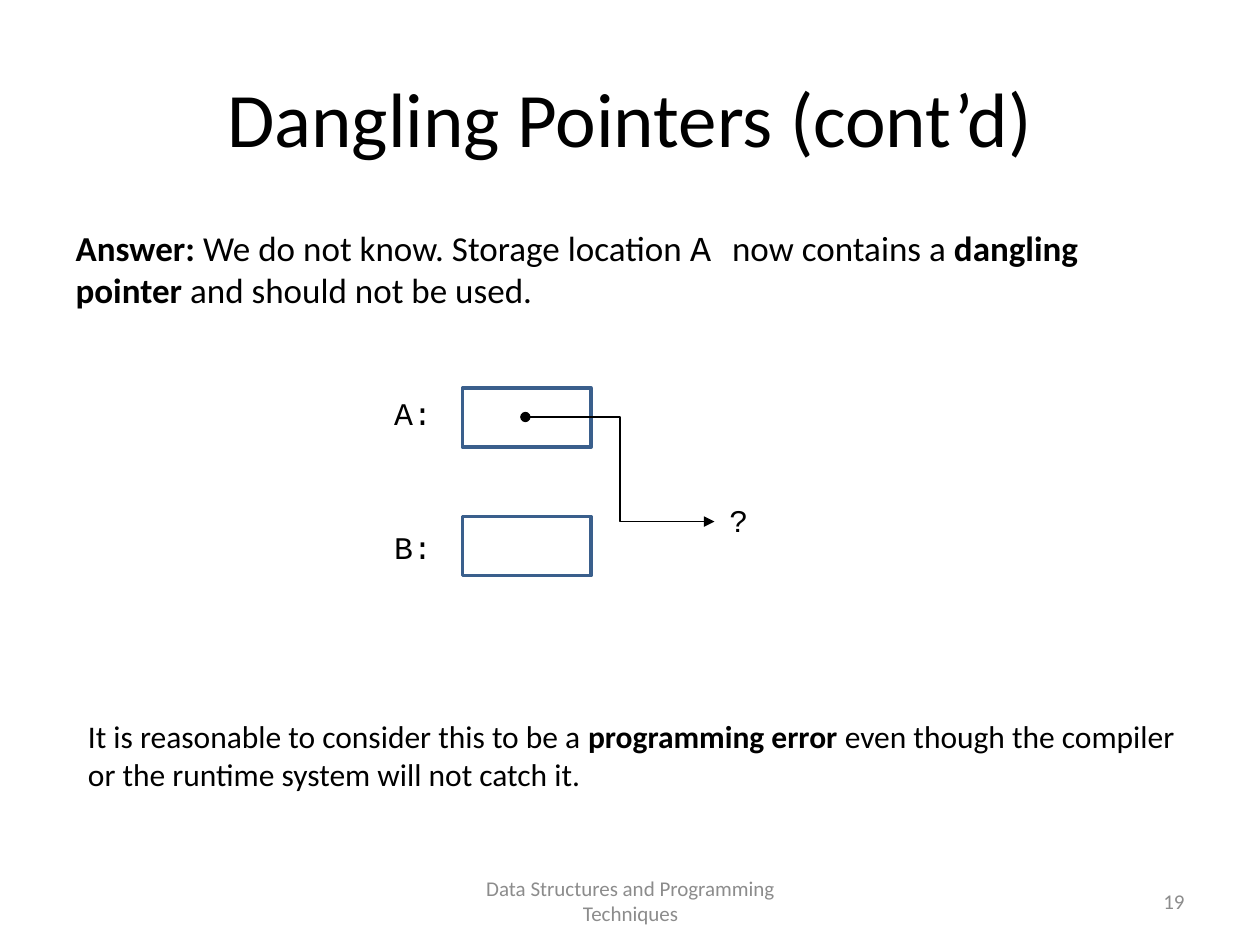
from lxml import etree
from pptx import Presentation
from pptx.dml.color import RGBColor
from pptx.enum.shapes import MSO_CONNECTOR, MSO_SHAPE
from pptx.enum.text import MSO_ANCHOR, PP_ALIGN
from pptx.oxml.ns import qn
from pptx.util import Inches, Pt


def color(hex_string):
    return RGBColor.from_string(hex_string)


def write(shape, lines, size, font="Calibri", hex_string="000000",
          align=PP_ALIGN.LEFT, anchor=MSO_ANCHOR.TOP, wrap=True):
    """Fill a shape with lines, each a list of (text, bold, font) runs."""
    frame = shape.text_frame
    frame.word_wrap = wrap
    frame.vertical_anchor = anchor
    for index, line in enumerate(lines):
        paragraph = frame.add_paragraph() if index else frame.paragraphs[0]
        paragraph.alignment = align
        paragraph.font.size = Pt(size)
        paragraph.font.name = font
        paragraph.font.color.rgb = color(hex_string)
        for text, bold, run_font in line:
            run = paragraph.add_run()
            run.text = text
            if bold:
                run.font.bold = True
            if run_font:
                run.font.name = run_font


presentation = Presentation()
presentation.slide_width = Inches(10)
presentation.slide_height = Inches(7.5)
slide = presentation.slides.add_slide(presentation.slide_layouts[1])
shapes = slide.shapes

# Title
title = shapes.title
title.left, title.top, title.width, title.height = map(Inches, (0.5, 0.3, 9, 1.25))
write(title, [[("Dangling Pointers (cont’d)", False, None)]], 44,
      align=PP_ALIGN.CENTER, anchor=MSO_ANCHOR.MIDDLE)

# Answer, without a bullet
body = slide.placeholders[1]
body.left, body.top, body.width, body.height = map(Inches, (0.5, 1.75, 9, 4.95))
write(body, [[
    ("Answer:", True, None),
    (" We do not know. Storage location ", False, None),
    ("A ", False, "Courier New"),
    ("now contains a ", False, None),
    ("dangling pointer", True, None),
    (" and should not be used.", False, None),
]], 20)
properties = body.text_frame.paragraphs[0]._p.get_or_add_pPr()
properties.set("marL", "0")
properties.set("indent", "0")
bullet = etree.Element(qn("a:buNone"))
properties.insert_element_before(bullet, "a:tabLst", "a:defRPr", "a:extLst")

# Storage cells A and B
for top in (3.08, 4.1):
    cell = shapes.add_shape(MSO_SHAPE.RECTANGLE, Inches(3.67), Inches(top),
                            Inches(1.02), Inches(0.47))
    cell.shadow.inherit = False
    cell.fill.background()
    cell.line.color.rgb = color("3A5F8C")
    cell.line.width = Pt(2)

# Cell labels and the unknown target
for text, left, top in (("A:", 3.03, 3.08), ("B:", 3.03, 4.14), ("?", 5.69, 3.93)):
    label = shapes.add_textbox(Inches(left), Inches(top), Inches(0.65), Inches(0.4))
    write(label, [[(text, False, None)]], 18, font="Courier New")

# Dangling pointer
pointer = shapes.add_connector(MSO_CONNECTOR.ELBOW, Inches(4.17), Inches(3.31),
                               Inches(5.67), Inches(4.14))
pointer.line.color.rgb = color("000000")
pointer.line.width = Pt(1)
line = pointer.line._get_or_add_ln()
etree.SubElement(line, qn("a:headEnd"), type="oval")
etree.SubElement(line, qn("a:tailEnd"), type="triangle")
etree.SubElement(pointer._element.spPr, qn("a:effectLst"))

# Closing remark
remark = shapes.add_textbox(Inches(0.6), Inches(5.64), Inches(9.03), Inches(0.71))
write(remark, [
    [("It is reasonable to consider this to be a ", False, None),
     ("programming error ", True, None),
     ("even though the compiler", False, None)],
    [("or the runtime system will not catch it.", False, None)],
], 18, wrap=False)

# Footer and slide number
for text, left, width, align in (
    ("Data Structures and Programming Techniques", 3.42, 3.17, PP_ALIGN.CENTER),
    ("19", 7.17, 2.33, PP_ALIGN.RIGHT),
):
    footer = shapes.add_textbox(Inches(left), Inches(6.95), Inches(width), Inches(0.4))
    write(footer, [[(text, False, None)]], 12, hex_string="8C8C8C",
          align=align, anchor=MSO_ANCHOR.MIDDLE)

presentation.save("out.pptx")
